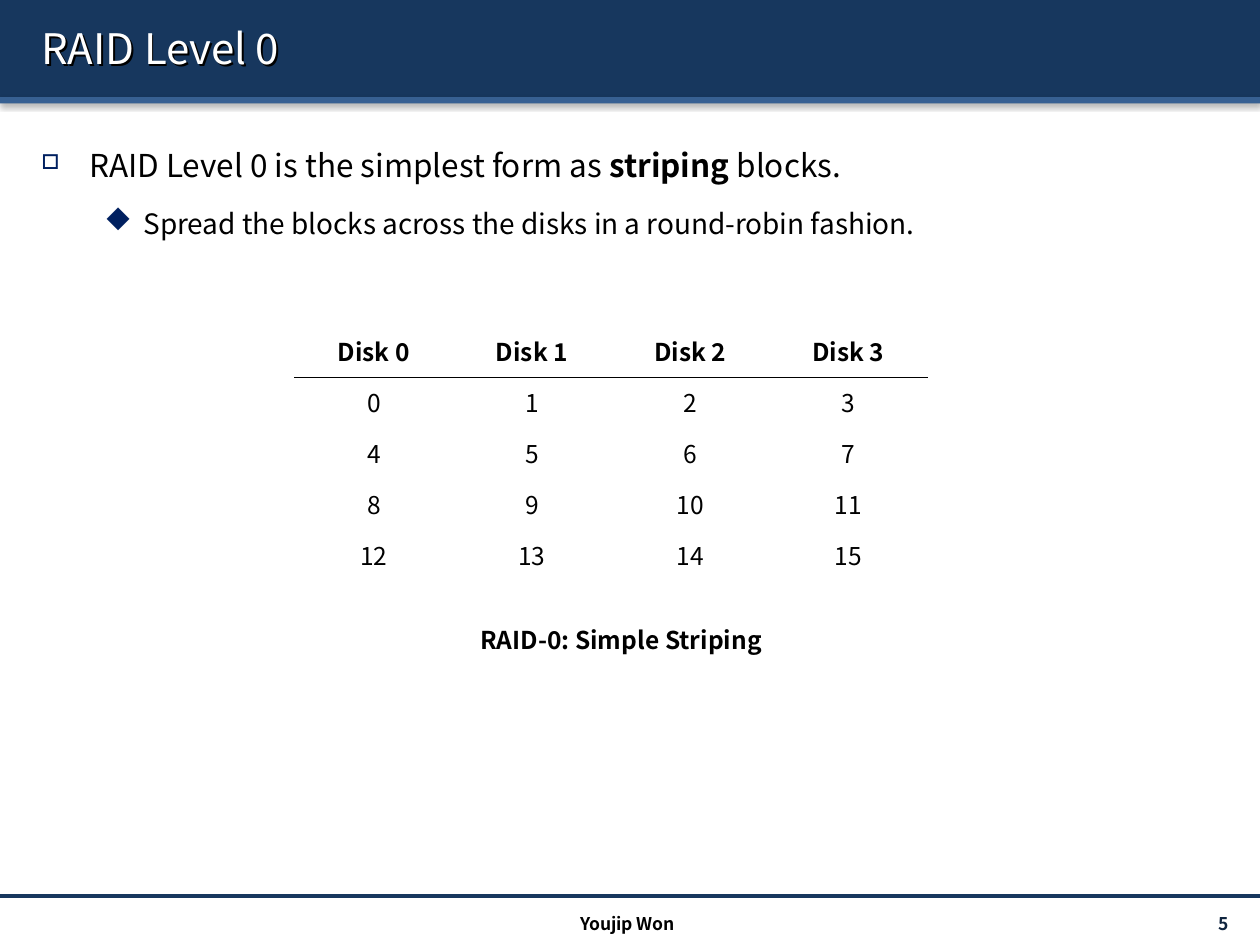
"""Build the RAID Level 0 slide with its striping table."""
from lxml import etree
from pptx import Presentation
from pptx.dml.color import RGBColor
from pptx.enum import shapes, text
from pptx.oxml.ns import qn
from pptx.util import Inches, Pt

COLORS = {"navy": "17375E", "blue": "376092", "bullet": "002060",
          "number": "0F243E", "black": "000000", "white": "FFFFFF"}
FONT = "Noto Sans CJK KR"


def style_runs(para, size, color="black", bold=False):
    for span in para.runs:
        span.font.size = Pt(size)
        span.font.bold = bold
        span.font.name = FONT
        span.font.color.rgb = RGBColor.from_string(COLORS[color])
        etree.SubElement(span.font._element, qn("a:ea"), typeface=FONT)


def add_text(left, top, width, height, words, size, color="black", bold=False,
             align=text.PP_ALIGN.LEFT, anchor=text.MSO_ANCHOR.TOP):
    box = page.shapes.add_textbox(Inches(left), Inches(top), Inches(width), Inches(height))
    frame = box.text_frame
    frame.word_wrap = True
    frame.vertical_anchor = anchor
    frame.text = words
    frame.paragraphs[0].alignment = align
    style_runs(frame.paragraphs[0], size, color, bold)
    return box


deck = Presentation()
deck.slide_width, deck.slide_height = Inches(10), Inches(7.5)
page = deck.slides.add_slide(deck.slide_layouts[6])

bands = []
for top, height, color in [(0, 0.77, "navy"), (0.77, 0.05, "blue")]:
    band = page.shapes.add_shape(shapes.MSO_SHAPE.RECTANGLE, 0, Inches(top), Inches(10), Inches(height))
    band.fill.solid()
    band.fill.fore_color.rgb = RGBColor.from_string(COLORS[color])
    band.line.fill.background()
    bands.append(band)

rule = page.shapes.add_connector(shapes.MSO_CONNECTOR.STRAIGHT, 0, Inches(7.11), Inches(10), Inches(7.11))
rule.line.color.rgb = RGBColor.from_string(COLORS["navy"])
rule.line.width = Pt(2)
etree.SubElement(rule._element.spPr, qn("a:effectLst"))

title = add_text(0.23, 0.06, 9.61, 0.64, "RAID Level 0", 24, "white", anchor=text.MSO_ANCHOR.MIDDLE)

shadows = [(band, 3.1, 1.6, 90, 38) for band in bands] + [(title, 0, 1.6, 45, 100)]
for shape, blur, distance, angle, opacity in shadows:
    effects = etree.SubElement(shape._element.spPr, qn("a:effectLst"))
    shadow = etree.SubElement(effects, qn("a:outerShdw"), blurRad=str(Pt(blur)),
                              dist=str(Pt(distance)), dir=str(angle * 60000),
                              algn="tl", rotWithShape="0")
    shade = etree.SubElement(shadow, qn("a:srgbClr"), val=COLORS["black"])
    etree.SubElement(shade, qn("a:alpha"), val=str(opacity * 1000))

body = page.shapes.add_textbox(Inches(0.23), Inches(0.96), Inches(9.61), Inches(6.02))
body.text_frame.word_wrap = True
points = [
    (["RAID Level 0 is the simplest form as ", "striping", " blocks."], 18, 0.38, 0.38, "o", 65),
    (["Spread the blocks across the disks in a round-robin fashion."], 16, 0.81, 0.31, "u", 100),
]
for level, (words, size, margin, hanging, mark, scale) in enumerate(points):
    para = body.text_frame.add_paragraph() if level else body.text_frame.paragraphs[0]
    para.level = level
    para.line_spacing = 1.5
    para.space_before = Pt(0.2 * size * level)
    props = para._element.get_or_add_pPr()
    props.set("marL", str(Inches(margin)))
    props.set("indent", str(-Inches(hanging)))
    bullet_color = etree.SubElement(props, qn("a:buClr"))
    etree.SubElement(bullet_color, qn("a:srgbClr"), val=COLORS["bullet"])
    etree.SubElement(props, qn("a:buSzPct"), val=str(scale * 1000))
    etree.SubElement(props, qn("a:buFont"), typeface="Wingdings", pitchFamily="2", charset="2")
    etree.SubElement(props, qn("a:buChar"), char=mark)
    for word in words:
        para.add_run().text = word
    style_runs(para, size)
body.text_frame.paragraphs[0].runs[1].font.bold = True

add_text(8.71, 7.21, 1.17, 0.24, "5 ", 10, "number", True,
         text.PP_ALIGN.RIGHT, text.MSO_ANCHOR.MIDDLE)
add_text(3.32, 7.2, 3.32, 0.24, "Youjip Won", 10, bold=True, align=text.PP_ALIGN.CENTER)

disks, stripes = 4, 4
table = page.shapes.add_table(stripes + 1, disks, Inches(2.34), Inches(2.59),
                              Inches(5.02), Inches(2.03)).table
table.horz_banding = False
for row in range(stripes + 1):
    for disk in range(disks):
        cell = table.cell(row, disk)
        cell.text = str((row - 1) * disks + disk) if row else f"Disk {disk}"
        para = cell.text_frame.paragraphs[0]
        para.alignment = text.PP_ALIGN.CENTER
        style_runs(para, 14, bold=row == 0)
        if row < 2:
            edge = etree.SubElement(cell._tc.get_or_add_tcPr(), qn("a:lnT" if row else "a:lnB"),
                                    w=str(Pt(0.75)))
            edge_fill = etree.SubElement(edge, qn("a:solidFill"))
            etree.SubElement(edge_fill, qn("a:srgbClr"), val=COLORS["black"])
        cell.fill.solid()
        cell.fill.fore_color.rgb = RGBColor.from_string(COLORS["white"])

caption = add_text(2.65, 4.91, 4.56, 0.34, "RAID-0: Simple Striping", 14, bold=True,
                   align=text.PP_ALIGN.CENTER)
caption.text_frame.auto_size = text.MSO_AUTO_SIZE.SHAPE_TO_FIT_TEXT

deck.save("out.pptx")
